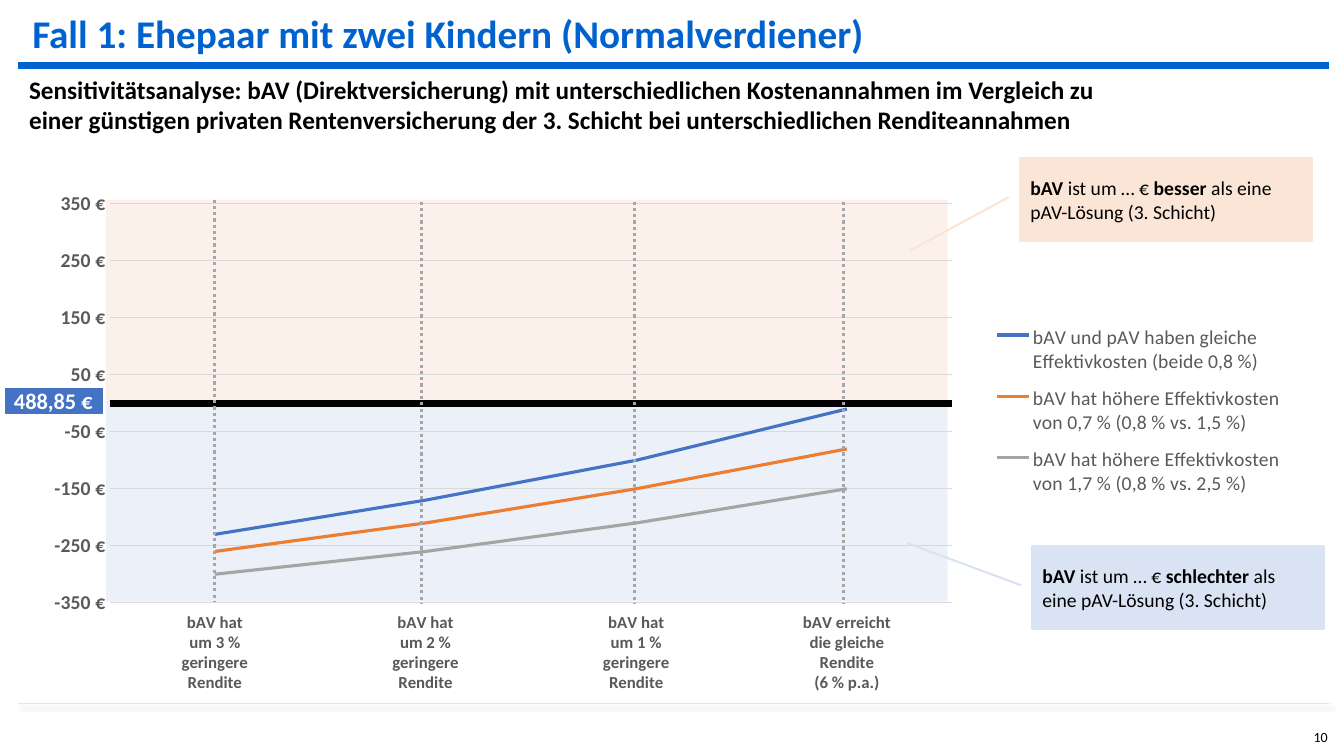
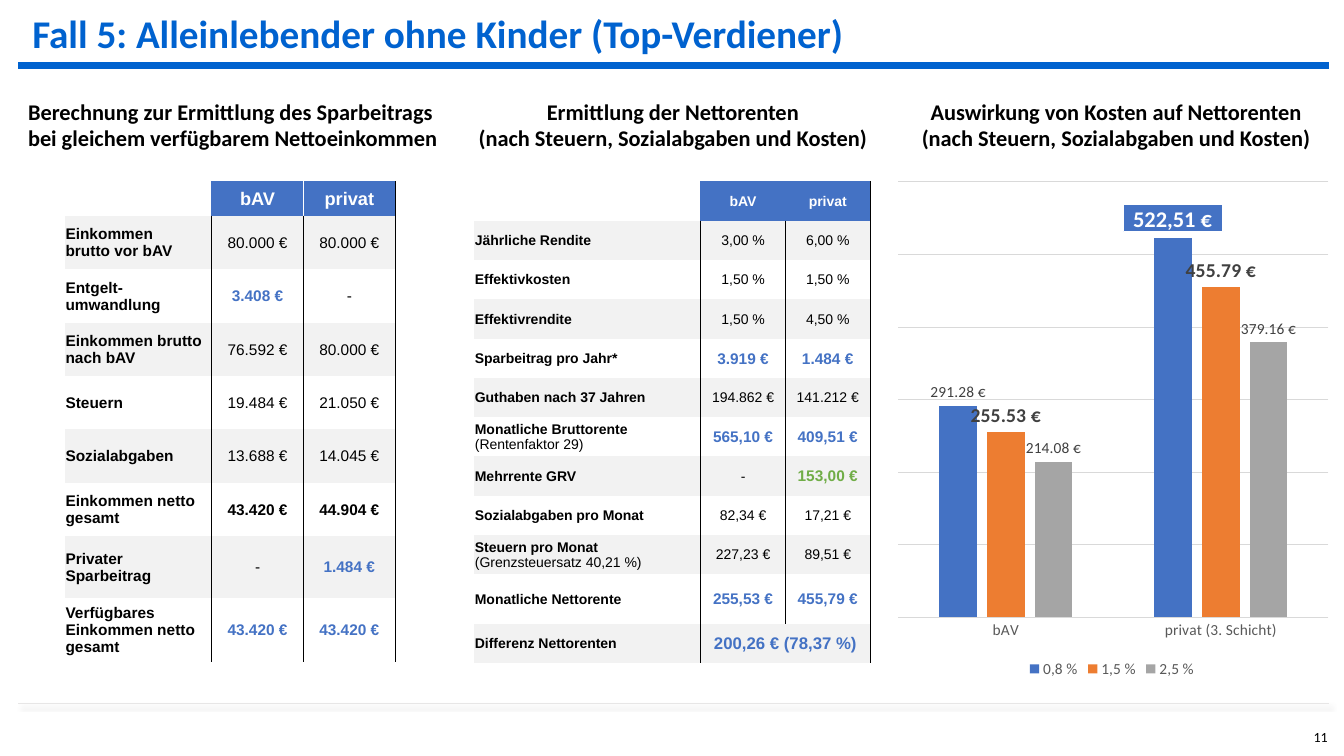
from dataclasses import dataclass

import pptx
import pptx.chart.data
import pptx.dml.color
import pptx.enum.chart
import pptx.enum.dml
import pptx.enum.shapes
import pptx.enum.text
import pptx.oxml
import pptx.oxml.ns
import pptx.util

Inches, Pt = pptx.util.Inches, pptx.util.Pt
ALIGN, ANCHOR = pptx.enum.text.PP_ALIGN, pptx.enum.text.MSO_ANCHOR
SHAPE = pptx.enum.shapes.MSO_SHAPE
CHART = pptx.enum.chart


@dataclass(frozen=True)
class Theme:
    title: str = "0062CF"
    black: str = "000000"
    white: str = "FFFFFF"
    blue: str = "4472C4"
    orange: str = "ED7D31"
    grey: str = "A5A5A5"
    green: str = "70AD47"
    stripe: str = "F2F2F2"
    better: str = "FBE5D6"
    worse: str = "DAE3F3"
    guide: str = "A6A6A6"
    grid: str = "D9D9D9"
    footer: str = "E7E6E6"
    muted: str = "595959"
    label: str = "404040"
    font: str = "Calibri"
    table_font: str = "Arial"
    title_size: int = 28
    lead_size: int = 18
    heading_size: int = 16
    note_size: int = 14
    axis_size: int = 12
    small_size: int = 11
    number_size: int = 10


THEME = Theme()
SERIES_COLORS = [THEME.blue, THEME.orange, THEME.grey]
FIRST_NUMBER = 10

SENSITIVITY = {
    "title": "Fall 1: Ehepaar mit zwei Kindern (Normalverdiener)",
    "lead": "Sensitivitätsanalyse: bAV (Direktversicherung) mit unterschiedlichen Kostenannahmen im Vergleich zu "
            "einer günstigen privaten Rentenversicherung der 3. Schicht bei unterschiedlichen Renditeannahmen",
    "bands": [(3.98, 1.99, THEME.worse), (1.98, 2.02, THEME.better)],
    "guides": [(2.13, 1.98), (4.18, 2), (6.29, 2), (8.37, 2)],
    "callouts": [
        ((10.12, 1.57), THEME.better, (0.47, -0.04, 1.12, -0.38), "besser"),
        ((10.24, 5.42), THEME.worse, (0.47, -0.04, -0.04, -0.43), "schlechter"),
    ],
    "categories": [
        "bAV hat\num 3 %\ngeringere\nRendite",
        "bAV hat\num 2 %\ngeringere\nRendite",
        "bAV hat\num 1 %\ngeringere\nRendite",
        "bAV erreicht\ndie gleiche\nRendite\n(6 % p.a.)",
    ],
    "series": [
        ("bAV und pAV haben gleiche\nEffektivkosten (beide 0,8 %)", [-230, -170, -100, -10]),
        ("bAV hat höhere Effektivkosten\nvon 0,7 % (0,8 % vs. 1,5 %)", [-260, -210, -150, -80]),
        ("bAV hat höhere Effektivkosten\nvon 1,7 % (0,8 % vs. 2,5 %)", [-300, -260, -210, -150]),
    ],
}

COMPARISON = {
    "title": "Fall 5: Alleinlebender ohne Kinder (Top-Verdiener)",
    "headings": [
        ((0.18, 0.92, 4.33, 0.64), ALIGN.LEFT,
         "Berechnung zur Ermittlung des Sparbeitrags\nbei gleichem verfügbarem Nettoeinkommen"),
        ((4.51, 0.92, 4.33, 0.64), ALIGN.CENTER,
         "Ermittlung der Nettorenten\n(nach Steuern, Sozialabgaben und Kosten)"),
        ((8.94, 0.92, 4.26, 0.64), ALIGN.CENTER,
         "Auswirkung von Kosten auf Nettorenten\n(nach Steuern, Sozialabgaben und Kosten)"),
    ],
    "categories": ["bAV", "privat (3. Schicht)"],
    "series": [("0,8 %", [291.28, 522.51]), ("1,5 %", [255.53, 455.79]), ("2,5 %", [214.08, 379.16])],
}

CELL_STYLES = {
    "plain": (False, THEME.black),
    "strong": (True, THEME.black),
    "accent": (True, THEME.blue),
    "gain": (True, THEME.green),
}
SAVINGS_TABLE = {
    "box": (0.64, 1.8, 3.27, 4.76),
    "columns": [1.46, 0.91, 0.91],
    "heights": [0.34] + [0.53] * 6 + [0.61, 0.64],
    "sizes": {"header": 13, "plain": 11, "accent": 11},
    "divider": THEME.white,
    "rows": [
        ("Einkommen\nbrutto vor bAV", ["80.000 €", "80.000 €"], ["plain", "plain"]),
        ("Entgelt-umwandlung", ["3.408 €", "-"], ["accent", "plain"]),
        ("Einkommen brutto nach bAV", ["76.592 €", "80.000 €"], ["plain", "plain"]),
        ("Steuern", ["19.484 €", "21.050 €"], ["plain", "plain"]),
        ("Sozialabgaben", ["13.688 €", "14.045 €"], ["plain", "plain"]),
        ("Einkommen netto gesamt", ["43.420 €", "44.904 €"], ["strong", "strong"]),
        ("Privater Sparbeitrag", ["-", "1.484 €"], ["plain", "accent"]),
        ("Verfügbares Einkommen netto gesamt", ["43.420 €", "43.420 €"], ["accent", "accent"]),
    ],
}
PENSION_TABLE = {
    "box": (4.7, 1.8, 3.93, 4.76),
    "columns": [2.25, 0.84, 0.84],
    "heights": [0.39] * 10 + [0.49, 0.39],
    "sizes": {"header": 10, "plain": 10, "accent": 11, "gain": 11, "merged": 12},
    "divider": THEME.blue,
    "rows": [
        ("Jährliche Rendite", ["3,00 %", "6,00 %"], ["plain", "plain"]),
        ("Effektivkosten", ["1,50 %", "1,50 %"], ["plain", "plain"]),
        ("Effektivrendite", ["1,50 %", "4,50 %"], ["plain", "plain"]),
        ("Sparbeitrag pro Jahr*", ["3.919 €", "1.484 €"], ["accent", "accent"]),
        ("Guthaben nach 37 Jahren", ["194.862 €", "141.212 €"], ["plain", "plain"]),
        ("Monatliche Bruttorente\n(Rentenfaktor 29)", ["565,10 €", "409,51 €"], ["accent", "accent"]),
        ("Mehrrente GRV", ["-", "153,00 €"], ["plain", "gain"]),
        ("Sozialabgaben pro Monat", ["82,34 €", "17,21 €"], ["plain", "plain"]),
        ("Steuern pro Monat\n(Grenzsteuersatz 40,21 %)", ["227,23 €", "89,51 €"], ["plain", "plain"]),
        ("Monatliche Nettorente", ["255,53 €", "455,79 €"], ["accent", "accent"]),
        ("Differenz Nettorenten", ["200,26 € (78,37 %)"], ["accent"]),
    ],
}


def rgb(color):
    return pptx.dml.color.RGBColor.from_string(color)


def inches(box):
    return [Inches(value) for value in box]


def apply_format(target, values):
    for name, value in values.items():
        setattr(target, name, value)


def set_font(font, size, color=THEME.black, bold=False, name=THEME.font):
    apply_format(font, {"size": Pt(size), "bold": bold, "name": name})
    font.color.rgb = rgb(color)


def set_line(line, color, width):
    line.color.rgb = rgb(color)
    line.width = Pt(width)


def set_fill(fill, color):
    fill.solid()
    fill.fore_color.rgb = rgb(color)


def add_xml(parent, tag, position=None, **attributes):
    element = pptx.oxml.parse_xml(f"<{tag} {pptx.oxml.ns.nsdecls(tag.split(':')[0])}/>")
    for name, value in attributes.items():
        element.set(name, str(value))
    parent.insert(len(parent) if position is None else position, element)
    return element


def write_text(paragraph, text, size, color=THEME.black, bold=False, name=THEME.font):
    for index, line in enumerate(text.split("\n")):
        if index:
            paragraph.add_line_break()
        run = paragraph.add_run()
        run.text = line
        set_font(run.font, size, color, bold, name)


def add_text(slide, box, text, size, align=ALIGN.LEFT):
    frame = slide.shapes.add_textbox(*inches(box)).text_frame
    frame.word_wrap = True
    frame.paragraphs[0].alignment = align
    write_text(frame.paragraphs[0], text, size, bold=True)


def add_shape(slide, kind, box, color):
    shape = slide.shapes.add_shape(kind, *inches(box))
    shape.shadow.inherit = False
    set_fill(shape.fill, color)
    return shape


def add_line(slide, start, end, color, width):
    line = slide.shapes.add_connector(pptx.enum.shapes.MSO_CONNECTOR.STRAIGHT, *inches(start + end))
    set_line(line.line, color, width)
    return line, add_xml(line.element.spPr, "a:effectLst")


def add_badge(slide, left, top, text):
    badge = add_shape(slide, SHAPE.RECTANGLE, (left, top, 0.99, 0.27), THEME.blue)
    set_line(badge.line, THEME.white, 0.75)
    apply_format(badge.text_frame, {"word_wrap": False, "margin_top": 0, "margin_bottom": 0})
    paragraph = badge.text_frame.paragraphs[0]
    paragraph.alignment = ALIGN.LEFT
    write_text(paragraph, text, THEME.heading_size, THEME.white, True)


def add_slide(presentation, layout, title):
    slide = presentation.slides.add_slide(layout)
    shape = slide.shapes.title
    apply_format(shape, dict(zip(("left", "top", "width", "height"), inches((0.22, 0.04, 12.9, 0.57)))))
    shape.text_frame.vertical_anchor = ANCHOR.TOP
    paragraph = shape.text_frame.paragraphs[0]
    paragraph.alignment = ALIGN.LEFT
    write_text(paragraph, title, THEME.title_size, THEME.title, True)
    number = slide.shapes.add_textbox(*inches((12.93, 7.18, 0.4, 0.31))).text_frame.paragraphs[0]
    field = add_xml(number._p, "a:fld", id="{B6F15528-21DE-4FAA-801E-634DDDAF4B2B}", type="slidenum")
    properties = add_xml(field, "a:rPr", lang="de-DE", sz=THEME.number_size * 100)
    add_xml(properties, "a:latin", typeface=THEME.font)
    add_xml(field, "a:t").text = str(FIRST_NUMBER + len(presentation.slides) - 1)
    return slide


def add_layout_rules(slide, layout):
    for top, color, width in [(0.65, THEME.title, 4.5), (6.98, THEME.footer, 1)]:
        line, effects = add_line(slide, (0.18, top), (13.18, top), color, width)
        if color == THEME.footer:
            shadow = add_xml(effects, "a:outerShdw", blurRad=Pt(3), dist=Pt(3), dir=2700000, algn="tl")
            add_xml(add_xml(shadow, "a:srgbClr", val=THEME.black), "a:alpha", val=40000)
        layout.element.cSld.spTree.append(line.element)


def set_layout(parent, position, box, inner=False):
    for old in parent.findall(pptx.oxml.ns.qn("c:layout")):
        parent.remove(old)
    manual = add_xml(add_xml(parent, "c:layout", position), "c:manualLayout")
    if inner:
        add_xml(manual, "c:layoutTarget", val="inner")
    for mode in ("xMode", "yMode"):
        add_xml(manual, f"c:{mode}", val="edge")
    for name, value in zip("xywh", box):
        add_xml(manual, f"c:{name}", val=value)


def add_chart(slide, kind, box, content, plot_box, text_size, legend_position, number_format, scale):
    data = pptx.chart.data.CategoryChartData(number_format=number_format)
    data.categories = content["categories"]
    for name, values in content["series"]:
        data.add_series(name, values)
    chart = slide.shapes.add_chart(kind, *inches(box), data).chart
    apply_format(chart, {"has_title": False, "has_legend": True})
    set_font(chart.font, text_size)
    apply_format(chart.legend, {"position": legend_position, "include_in_layout": False})
    set_font(chart.legend.font, text_size, THEME.muted)
    set_layout(chart.element.find(".//" + pptx.oxml.ns.qn("c:plotArea")), 0, plot_box, True)
    chart.plots[0].vary_by_categories = False
    for axis in (chart.category_axis, chart.value_axis):
        apply_format(axis, {"major_tick_mark": CHART.XL_TICK_MARK.NONE,
                            "minor_tick_mark": CHART.XL_TICK_MARK.NONE})
    apply_format(chart.value_axis, {"minimum_scale": scale[0], "maximum_scale": scale[1], "major_unit": 100})
    set_line(chart.value_axis.major_gridlines.format.line, THEME.grid, 0.75)
    apply_format(chart.value_axis.tick_labels, {"number_format": number_format, "number_format_is_linked": False})
    return chart


def build_sensitivity(slide):
    for top, height, color in SENSITIVITY["bands"]:
        band = add_shape(slide, SHAPE.RECTANGLE, (1.05, top, 8.35, height), color)
        band.line.fill.background()
        add_xml(band.element.spPr.find(".//" + pptx.oxml.ns.qn("a:srgbClr")), "a:alpha", val=50000)
    chart = add_chart(slide, CHART.XL_CHART_TYPE.LINE, (0.33, 1.74, 12.82, 5.43), SENSITIVITY,
                      (0.059, 0.052, 0.652, 0.729), THEME.note_size, CHART.XL_LEGEND_POSITION.RIGHT,
                      '#,##0\\ "€"', (-350, 350))
    set_layout(chart.element.find(".//" + pptx.oxml.ns.qn("c:legend")), 1, (0.73, 0.25, 0.25, 0.36))
    chart.category_axis.tick_label_position = CHART.XL_TICK_LABEL_POSITION.LOW
    set_font(chart.category_axis.tick_labels.font, THEME.axis_size, THEME.muted, True)
    set_line(chart.category_axis.format.line, THEME.black, 5)
    set_font(chart.value_axis.tick_labels.font, THEME.note_size, THEME.muted, True)
    chart.value_axis.format.line.fill.background()
    for series, color in zip(chart.plots[0].series, SERIES_COLORS):
        series.smooth = False
        set_line(series.format.line, color, 2.25)
    for position, color, adjustments, verdict in SENSITIVITY["callouts"]:
        callout = add_shape(slide, SHAPE.LINE_CALLOUT_1, position + (2.89, 0.82), color)
        set_line(callout.line, color, 1.5)
        for index, value in enumerate(adjustments):
            callout.adjustments[index] = value
        callout.text_frame.vertical_anchor = ANCHOR.MIDDLE
        paragraph = callout.text_frame.paragraphs[0]
        paragraph.alignment = ALIGN.LEFT
        parts = ["bAV", " ist um … € ", verdict, " als eine pAV-Lösung (3. Schicht)"]
        for index, part in enumerate(parts):
            write_text(paragraph, part, THEME.note_size, bold=index % 2 == 0)
    add_text(slide, (0.19, 0.69, 11.19, 0.71), SENSITIVITY["lead"], THEME.lead_size)
    for left, top in SENSITIVITY["guides"]:
        guide, _ = add_line(slide, (left, top), (left, top + 3.99), THEME.guide, 2.25)
        guide.line.dash_style = pptx.enum.dml.MSO_LINE.ROUND_DOT
    add_badge(slide, 0.04, 3.84, "488,85 €")


def set_borders(cell, left, right):
    properties = cell._tc.get_or_add_tcPr()
    for side, color in (("L", left), ("R", right), ("T", None), ("B", None)):
        border = add_xml(properties, f"a:ln{side}", w=Pt(0.5))
        if color:
            add_xml(add_xml(border, "a:solidFill"), "a:srgbClr", val=color)
        else:
            add_xml(border, "a:noFill")


def add_table(slide, content):
    rows, sizes = content["rows"], content["sizes"]
    table = slide.shapes.add_table(len(rows) + 1, 3, *inches(content["box"])).table
    apply_format(table, {"first_row": False, "horz_banding": False})
    for column, width in zip(table.columns, content["columns"]):
        column.width = Inches(width)
    for row, height in zip(table.rows, content["heights"]):
        row.height = Inches(height)
    for row_index, (label, values, styles) in enumerate([("", ["bAV", "privat"], [])] + rows):
        header = row_index == 0
        merged = len(values) == 1
        if merged:
            table.cell(row_index, 1).merge(table.cell(row_index, 2))
        inner = [THEME.blue, content["divider"]] if header else [THEME.black] * 2
        edges = [None] + inner + [THEME.black]
        for column_index in range(3):
            cell = table.cell(row_index, column_index)
            set_borders(cell, *edges[column_index:column_index + 2])
            set_fill(cell.fill, THEME.blue if header and column_index else
                     THEME.stripe if row_index % 2 else THEME.white)
            apply_format(cell, {"margin_left": Inches(0.01), "margin_top": Inches(0.01),
                                "margin_right": Inches(0.01), "margin_bottom": 0,
                                "vertical_anchor": ANCHOR.MIDDLE})
            paragraph = cell.text_frame.paragraphs[0]
            if column_index == 0 and label:
                main, bracket, detail = label.partition("\n(")
                write_text(paragraph, main, sizes["plain"], bold=True, name=THEME.table_font)
                if detail:
                    write_text(paragraph, bracket + detail, sizes["plain"], name=THEME.table_font)
            elif 0 < column_index <= len(values):
                paragraph.alignment = ALIGN.CENTER
                style = "header" if header else styles[column_index - 1]
                bold, color = (True, THEME.white) if header else CELL_STYLES[style]
                size = sizes["merged"] if merged else sizes.get(style, sizes["plain"])
                write_text(paragraph, values[column_index - 1], size, color, bold, THEME.table_font)


def build_comparison(slide):
    for box, align, text in COMPARISON["headings"]:
        add_text(slide, box, text, THEME.heading_size, align)
    for content in (SAVINGS_TABLE, PENSION_TABLE):
        add_table(slide, content)
    number_format = '#,##0.00\\ "€"'
    chart = add_chart(slide, CHART.XL_CHART_TYPE.COLUMN_CLUSTERED, (8.84, 1.8, 4.38, 4.97), COMPARISON,
                      (0.016, 0, 0.974, 0.87), THEME.small_size, CHART.XL_LEGEND_POSITION.BOTTOM,
                      number_format, (0, 600))
    chart.value_axis.visible = False
    set_font(chart.category_axis.tick_labels.font, THEME.small_size, THEME.muted)
    set_line(chart.category_axis.format.line, THEME.grid, 0.75)
    apply_format(chart.plots[0], {"gap_width": 219, "overlap": -27})
    for series, color in zip(chart.plots[0].series, SERIES_COLORS):
        set_fill(series.format.fill, color)
        apply_format(series.data_labels, {"show_value": True, "number_format": number_format,
                                          "number_format_is_linked": False,
                                          "position": CHART.XL_LABEL_POSITION.OUTSIDE_END})
        emphasized = color == THEME.orange
        set_font(series.data_labels.font, THEME.note_size if emphasized else THEME.small_size,
                 THEME.label, emphasized)
    add_badge(slide, 11.14, 2.03, "522,51 €")


def main():
    presentation = pptx.Presentation()
    apply_format(presentation, {"slide_width": Inches(13.33), "slide_height": Inches(7.5)})
    presentation.element.set("firstSlideNum", str(FIRST_NUMBER))
    layout = presentation.slide_layouts[5]
    sensitivity = add_slide(presentation, layout, SENSITIVITY["title"])
    add_layout_rules(sensitivity, layout)
    build_sensitivity(sensitivity)
    build_comparison(add_slide(presentation, layout, COMPARISON["title"]))
    presentation.save("out.pptx")


if __name__ == "__main__":
    main()
